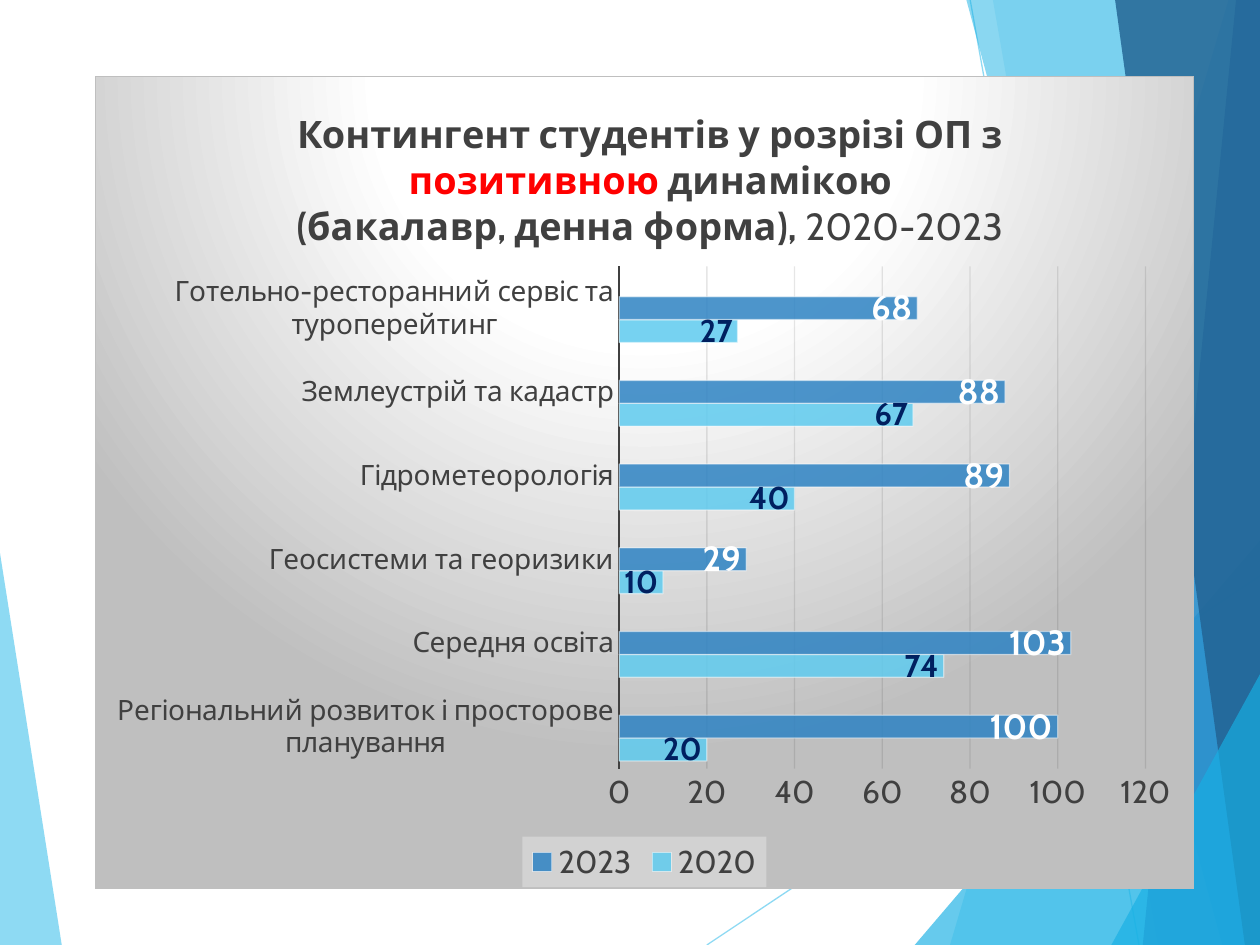
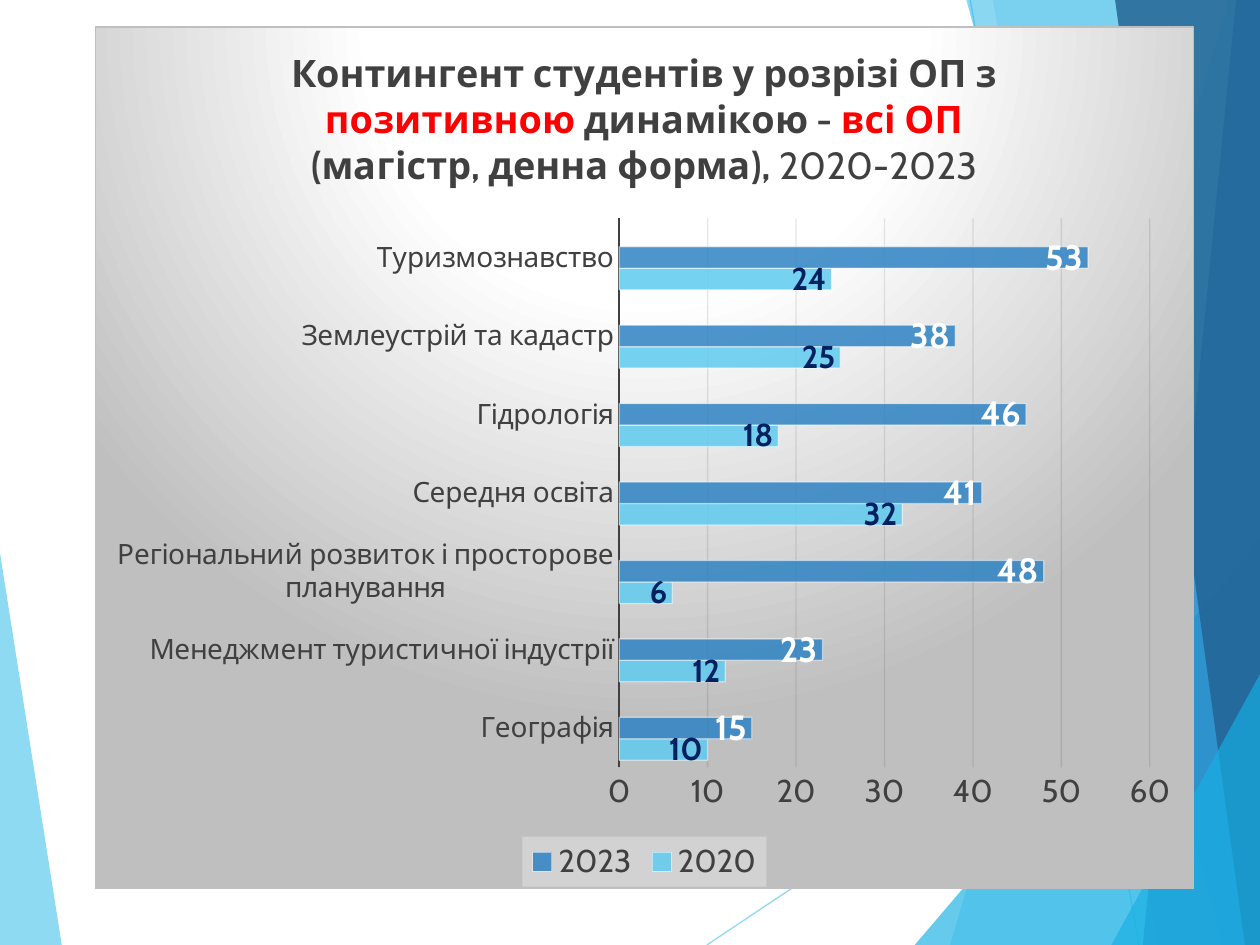
from lxml import etree
from pptx import Presentation
from pptx.chart.data import CategoryChartData
from pptx.dml.color import RGBColor
from pptx.enum.chart import XL_CHART_TYPE, XL_LABEL_POSITION, XL_LEGEND_POSITION, XL_TICK_MARK
from pptx.enum.shapes import MSO_CONNECTOR
from pptx.oxml import parse_xml
from pptx.oxml.ns import nsdecls, qn
from pptx.util import Inches, Pt

BAR = XL_CHART_TYPE.BAR_CLUSTERED
INSIDE_END = XL_LABEL_POSITION.INSIDE_END
BOTTOM = XL_LEGEND_POSITION.BOTTOM
NO_TICK = XL_TICK_MARK.NONE
STRAIGHT = MSO_CONNECTOR.STRAIGHT

FONT = "Cabin"
COLORS = {
    "sky": "5FCBEF", "cyan": "17B0E4", "blue": "2E83C3", "deep": "226292",
    "green": "42D0A2", "navy": "002060", "white": "FFFFFF", "text": "404040",
    "grid": "0D0D0D", "grey": "BFBFBF", "legend": "F2F2F2", "red": "FF0000",
}
LINES = [((5.61, 7.5), (10, 4.57)), ((7.7, 0), (9.04, 7.5))]
LEFT_BAND = ("sky", 70, [(0, 4.39), (0.49, 7.5), (0, 7.5)])
RIGHT_BANDS = [
    ("sky", 36, [(9.75, 0), (7.54, 7.5), (10, 7.5), (10, 0)]),
    ("sky", 20, [(7.88, 0), (9.19, 7.5), (10, 7.5), (10, 0)]),
    ("cyan", 66, [(7.26, 7.5), (10, 4.29), (10, 7.5)]),
    ("cyan", 50, [(7.67, 0), (9.7, 7.5), (10, 7.5), (10, 0)]),
    ("blue", 70, [(9.81, 0), (9.07, 7.5), (10, 7.5), (10, 0)]),
    ("deep", 82, [(8.85, 0), (9.88, 7.5), (10, 7.5), (10, 0)]),
    ("cyan", 66, [(8.82, 7.5), (10, 5.35), (10, 7.5)]),
]
SERIES_STYLES = [("sky", "navy", 18), ("blue", "white", 20), ("green", "white", 12)]


def rgb(name):
    return RGBColor.from_string(COLORS[name])


def fade(element, *percents):
    for color, percent in zip(element.iter(qn("a:srgbClr")), percents):
        etree.SubElement(color, qn("a:alpha")).set("val", str(percent * 1000))


def set_font(font, size, color, bold=False):
    font.name = FONT
    font.size = Pt(size)
    font.bold = bold
    font.color.rgb = rgb(color)


def set_line(line, color, width):
    line.color.rgb = rgb(color)
    line.width = Pt(width)


def set_layout(parent, x, y, w=None, h=None, inner=False):
    for old in parent.findall(qn("c:layout")):
        parent.remove(old)
    parts = '<c:layoutTarget val="inner"/>' if inner else ""
    parts += '<c:xMode val="edge"/><c:yMode val="edge"/>'
    for tag, value in zip("xywh", (x, y, w, h)):
        if value is not None:
            parts += f'<c:{tag} val="{value:.3f}"/>'
    layout = parse_xml(
        f'<c:layout {nsdecls("c")}><c:manualLayout>{parts}</c:manualLayout></c:layout>')
    anchor = parent.find(qn("c:overlay"))
    (parent[0] if anchor is None else anchor).addprevious(layout)


def add_band(s, left, top, color, opacity, points):
    points = [(Inches(left + x), Inches(top + y)) for x, y in points]
    builder = s.shapes.build_freeform(*points[0])
    builder.add_line_segments(points[1:])
    band = builder.convert_to_shape()
    band.shadow.inherit = False
    band.fill.solid()
    band.fill.fore_color.rgb = rgb(color)
    band.line.fill.background()
    fade(band._element.spPr, opacity)


def add_backdrop(s, left=0, top=0):
    add_band(s, left, top, *LEFT_BAND)
    for (x1, y1), (x2, y2) in LINES:
        ray = s.shapes.add_connector(
            STRAIGHT, Inches(left + x1), Inches(top + y1), Inches(left + x2), Inches(top + y2))
        set_line(ray.line, "sky", 0.75)
        fade(ray._element.spPr, 70)
        etree.SubElement(ray._element.spPr, qn("a:effectLst"))
    for band in RIGHT_BANDS:
        add_band(s, left, top, *band)


def fill_chart(chart):
    stops = "".join(
        f'<a:gs pos="{pos * 1000}"><a:srgbClr val="{COLORS[color]}"/></a:gs>'
        for pos, color in [(0, "white"), (39, "white"), (100, "grey")])
    chart._chartSpace.find(qn("c:chart")).addnext(parse_xml(
        f'<c:spPr {nsdecls("c", "a")}><a:gradFill><a:gsLst>{stops}</a:gsLst>'
        '<a:path path="circle"><a:fillToRect l="50000" t="-80000" r="50000" b="180000"/>'
        f'</a:path></a:gradFill><a:ln w="9525"><a:solidFill><a:srgbClr val="{COLORS["grey"]}"/>'
        '</a:solidFill></a:ln></c:spPr>'))


def add_title(chart, lines, x, y):
    tf = chart.chart_title.text_frame
    for i, line in enumerate(lines):
        p = tf.paragraphs[0] if i == 0 else tf.add_paragraph()
        for text, color, bold in line:
            r = p.add_run()
            r.text = text
            set_font(r.font, 21.6, color, bold)
    set_layout(chart.chart_title._element, x, y)


def style_axes(chart, maximum, step):
    for axis, size in ((chart.category_axis, 16), (chart.value_axis, 18)):
        axis.major_tick_mark = axis.minor_tick_mark = NO_TICK
        set_font(axis.tick_labels.font, size, "text")
    set_line(chart.category_axis.format.line, "text", 1.5)
    chart.category_axis.has_major_gridlines = False
    values = chart.value_axis
    values.minimum_scale, values.maximum_scale, values.major_unit = 0, maximum, step
    values.format.line.fill.background()
    values.has_major_gridlines = True
    set_line(values.major_gridlines.format.line, "grid", 0.75)
    fade(values._element.find(qn("c:majorGridlines")), 10)


def style_series(chart):
    plot = chart.plots[0]
    plot.gap_width = 65
    plot.vary_by_categories = False
    for series, (color, label_color, size) in zip(plot.series, SERIES_STYLES):
        series.format.fill.solid()
        series.format.fill.fore_color.rgb = rgb(color)
        set_line(series.format.line, "white", 0.75)
        fade(series._element.find(qn("c:spPr")), 85, 50)
        labels = series.data_labels
        labels.show_value = True
        labels.position = INSIDE_END
        set_font(labels.font, size, label_color, True)


def add_legend(chart, height):
    chart.has_legend = True
    legend = chart.legend
    legend.position = BOTTOM
    legend.include_in_layout = False
    set_font(legend.font, 18, "text")
    element = legend._element
    share = 0.4 / height
    set_layout(element, 0.389, 1 - share, 0.222, share)
    element.find(qn("c:legendPos")).addnext(parse_xml(
        f'<c:legendEntry {nsdecls("c")}><c:idx val="0"/><c:delete val="1"/></c:legendEntry>'))
    element.find(qn("c:overlay")).addnext(parse_xml(
        f'<c:spPr {nsdecls("c", "a")}><a:solidFill><a:srgbClr val="{COLORS["legend"]}">'
        '<a:alpha val="39000"/></a:srgbClr></a:solidFill></c:spPr>'))


def add_students_chart(s, box, programs, title, title_at, plot_box, scale):
    data = CategoryChartData()
    data.categories = [name for name, _, _ in programs]
    data.add_series("2020", [before for _, before, _ in programs])
    data.add_series("2023", [after for _, _, after in programs])
    data.add_series("Столбец1", [None] * len(programs))
    chart = s.shapes.add_chart(BAR, *map(Inches, box), data).chart
    set_font(chart.font, 10, "text")
    fill_chart(chart)
    add_title(chart, title, *title_at)
    style_axes(chart, *scale)
    style_series(chart)
    add_legend(chart, box[3])
    set_layout(chart._chartSpace.find(qn("c:chart")).find(qn("c:plotArea")),
               *plot_box, inner=True)


def title_lines(positive_line, level):
    return [
        [("Контингент студентів у розрізі ОП з", "text", True)],
        positive_line,
        [(f"({level}, денна форма),", "text", True), (" 2020-2023", "text", False)],
    ]


BACHELOR = dict(
    box=(0.75, 0.6, 8.73, 6.46),
    programs=[
        ("Регіональний розвиток і просторове планування", 20, 100),
        ("Середня освіта", 74, 103),
        ("Геосистеми та георизики", 10, 29),
        ("Гідрометеорологія", 40, 89),
        ("Землеустрій та кадастр", 67, 88),
        ("Готельно-ресторанний сервіс та туроперейтинг", 27, 68),
    ],
    title=title_lines([("позитивною", "red", True), (" динамікою", "text", True)], "бакалавр"),
    title_at=(0.18, 0.036),
    plot_box=(0.477, 0.234, 0.479, 0.618),
    scale=(120, 20),
)
MASTER = dict(
    box=(0.75, 0.21, 8.73, 6.85),
    programs=[
        ("Географія", 10, 15),
        ("Менеджмент туристичної індустрії", 12, 23),
        ("Регіональний розвиток і просторове планування", 6, 48),
        ("Середня освіта", 32, 41),
        ("Гідрологія", 18, 46),
        ("Землеустрій та кадастр", 25, 38),
        ("Туризмознавство", 24, 53),
    ],
    title=title_lines([("позитивною", "red", True), (" динамікою - ", "text", True),
                       ("всі ОП", "red", True)], "магістр"),
    title_at=(0.175, 0.02),
    plot_box=(0.477, 0.222, 0.483, 0.637),
    scale=(60, 10),
)


def main():
    prs = Presentation()
    prs.slide_width, prs.slide_height = Inches(10), Inches(7.5)
    for students in (BACHELOR, MASTER):
        s = prs.slides.add_slide(prs.slide_layouts[6])
        add_backdrop(s)
        add_students_chart(s, **students)
    prs.save("out.pptx")


if __name__ == "__main__":
    main()
